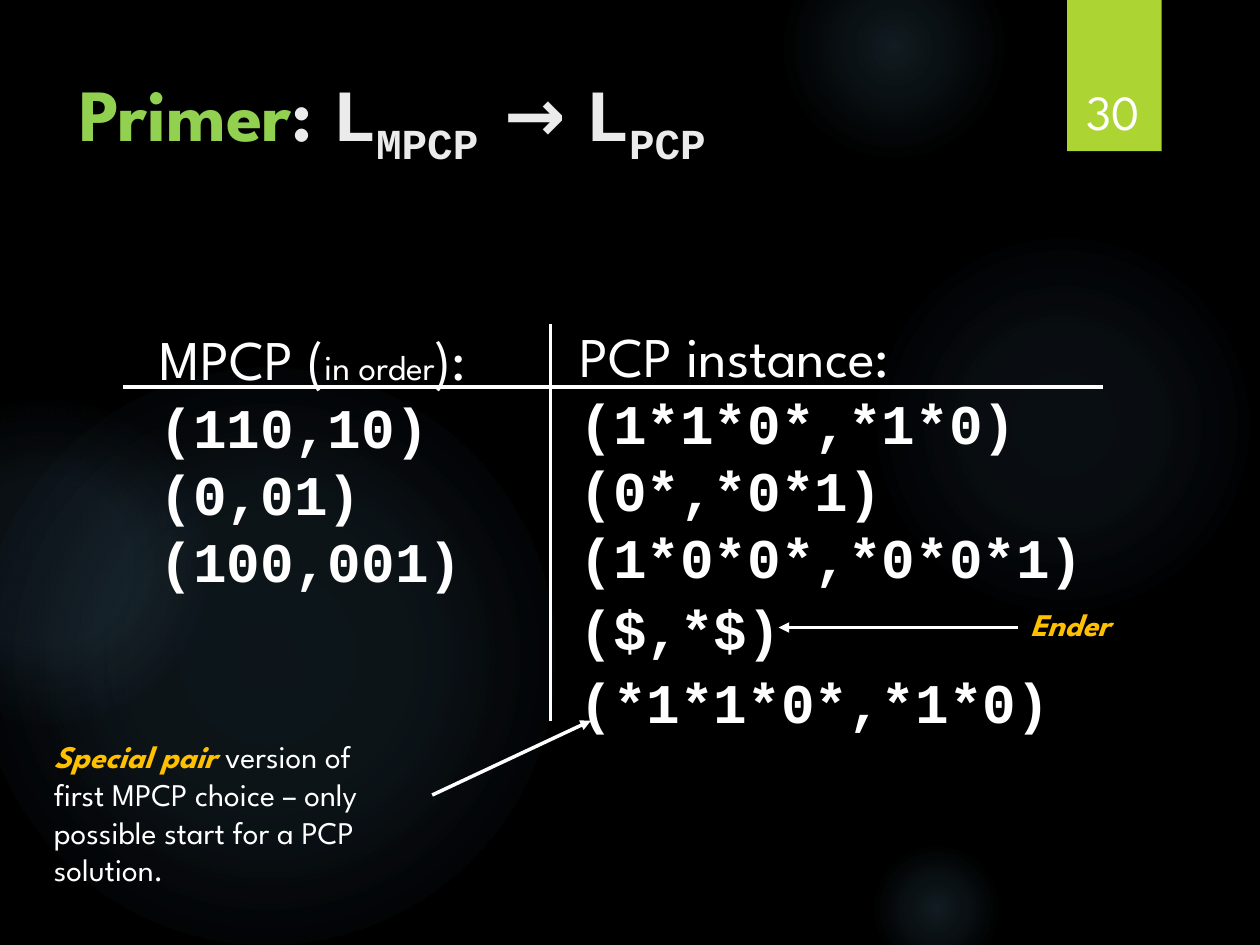
from lxml import etree
from pptx import Presentation
from pptx.dml.color import RGBColor
from pptx.enum.shapes import MSO_CONNECTOR, MSO_SHAPE
from pptx.enum.text import MSO_ANCHOR, MSO_AUTO_SIZE, PP_ALIGN
from pptx.oxml import parse_xml
from pptx.oxml.ns import nsdecls, qn
from pptx.util import Inches, Pt

SANS, MONO = "League Spartan", "Courier New"
WHITE, LIGHT, BLACK = "FFFFFF", "EBEBEB", "000000"
GREEN, LIME, AMBER, GLOW = "92D050", "ACD433", "FFC000", "7AC4F0"
PAIR_LEFT = 4.5

# Background glows: left, top, diameter, (position %, opacity %) stops
GLOWS = [
    (6.89, 1.83, 3.08, [(0, 7), (36, 6), (69, 0)]),
    (6.22, -0.5, 1.75, [(0, 14), (36, 7), (73, 0)]),
    (6.89, 6.67, 1.08, [(0, 14), (36, 7), (66, 0)]),
    (-0.17, 2.92, 4.58, [(0, 11), (36, 10), (75, 0)]),
    (-0.92, 3.17, 2.58, [(0, 8), (36, 8), (72, 0)]),
]


def rgb(color):
    return RGBColor.from_string(color)


def style(font, size=None, name=None, color=None, bold=None, italic=None):
    if size:
        font.size = Pt(size)
    if name:
        font.name = name
    if color:
        font.color.rgb = rgb(color)
    font.bold = bold
    font.italic = italic


def add_shape(slide, kind, left, top, width, height):
    shape = slide.shapes.add_shape(
        kind, Inches(left), Inches(top), Inches(width), Inches(height))
    shape.shadow.inherit = False
    shape.line.fill.background()
    return shape


def add_glow(slide, left, top, diameter, stops):
    shape = add_shape(slide, MSO_SHAPE.OVAL, left, top, diameter, diameter)
    stop_xml = "".join(
        f'<a:gs pos="{position * 1000}"><a:srgbClr val="{GLOW}">'
        f'<a:alpha val="{opacity * 1000}"/></a:srgbClr></a:gs>'
        for position, opacity in stops)
    gradient = parse_xml(
        f'<a:gradFill {nsdecls("a")} rotWithShape="1"><a:gsLst>{stop_xml}</a:gsLst>'
        '<a:path path="circle"><a:fillToRect l="50000" t="50000" r="50000" b="50000"/>'
        '</a:path></a:gradFill>')
    shape._element.spPr.find(qn("a:prstGeom")).addnext(gradient)


def add_text(slide, left, top, width, height, lines, **font):
    """Each line is a string, or a list of (text, run style) pairs."""
    box = slide.shapes.add_textbox(
        Inches(left), Inches(top), Inches(width), Inches(height))
    frame = box.text_frame
    frame.word_wrap = False
    frame.auto_size = MSO_AUTO_SIZE.SHAPE_TO_FIT_TEXT
    for index, line in enumerate(lines):
        paragraph = frame.add_paragraph() if index else frame.paragraphs[0]
        style(paragraph.font, **font)
        for text, run_style in [(line, {})] if isinstance(line, str) else line:
            run = paragraph.add_run()
            run.text = text
            style(run.font, **{**font, **run_style})
    return box


def add_line(slide, start, end, arrow=False):
    line = slide.shapes.add_connector(
        MSO_CONNECTOR.STRAIGHT, *(Inches(value) for value in (*start, *end)))
    line.line.color.rgb = rgb(WHITE)
    line.line.width = Pt(2)
    if arrow:
        etree.SubElement(line.line._get_or_add_ln(), qn("a:tailEnd"), type="triangle")
    etree.SubElement(line._element.spPr, qn("a:effectLst"))


def fill_title(slide):
    title = slide.shapes.title
    title.left, title.top = Inches(0.53), Inches(0.49)
    title.width, title.height = Inches(7.72), Inches(1.53)
    frame = title.text_frame
    frame.vertical_anchor = MSO_ANCHOR.TOP
    frame.auto_size = MSO_AUTO_SIZE.NONE
    paragraph = frame.paragraphs[0]
    paragraph.alignment = PP_ALIGN.LEFT
    for text, name, color, subscript in [
        ("Primer", SANS, GREEN, False), (": ", SANS, LIGHT, False),
        ("L", MONO, LIGHT, False), ("MPCP ", MONO, LIGHT, True),
        ("→ ", SANS, LIGHT, False),
        ("L", MONO, LIGHT, False), ("PCP", MONO, LIGHT, True),
    ]:
        run = paragraph.add_run()
        run.text = text
        style(run.font, 42, name, color, bold=True)
        if subscript:
            run._r.get_or_add_rPr().set("baseline", "-25000")


def add_page_number(slide):
    tab = add_shape(slide, MSO_SHAPE.RECTANGLE, 8.47, 0, 0.75, 1.2)
    tab.fill.solid()
    tab.fill.fore_color.rgb = rgb(LIME)
    number = add_text(slide, 8.49, 0.32, 0.69, 0.84, ["30"],
                      size=28, name=SANS, color=WHITE)
    number.text_frame.auto_size = MSO_AUTO_SIZE.NONE
    number.text_frame.word_wrap = True
    number.text_frame.vertical_anchor = MSO_ANCHOR.BOTTOM
    number.text_frame.paragraphs[0].alignment = PP_ALIGN.CENTER


def add_pairs(slide, left, top, width, height, heading, pairs):
    """A column of string pairs, with an optional heading."""
    lines = [heading] if heading else []
    lines += [[(pair, {"name": MONO, "bold": True})] for pair in pairs]
    add_text(slide, left, top, width, height, lines,
             size=32, name=SANS, color=WHITE)


def main():
    presentation = Presentation()
    presentation.slide_width, presentation.slide_height = Inches(10), Inches(7.5)
    slide = presentation.slides.add_slide(presentation.slide_layouts[5])
    slide.background.fill.solid()
    slide.background.fill.fore_color.rgb = rgb(BLACK)

    # Backdrop, title and page number
    for glow in GLOWS:
        add_glow(slide, *glow)
    fill_title(slide)
    add_page_number(slide)

    # The two instances side by side
    add_pairs(slide, 1.17, 2.53, 3.13, 2.26,
              [("MPCP (", {}), ("in order", {"size": 20}), ("):", {})],
              ["(110,10)", "(0,01)", "(100,001)"])
    add_pairs(slide, PAIR_LEFT, 2.5, 4.25, 2.26, "PCP instance:",
              ["(1*1*0*,*1*0)", "(0*,*0*1)", "(1*0*0*,*0*0*1)"])

    # Ender pair and its label
    add_pairs(slide, PAIR_LEFT, 4.67, 1.82, 0.64, None, ["($,*$)"])
    add_text(slide, 8.08, 4.75, 0.9, 0.4, ["Ender"],
             size=18, name=SANS, color=AMBER, bold=True, italic=True)
    add_line(slide, (8.08, 4.98), (6.18, 4.98), arrow=True)

    # Special pair and its note
    add_pairs(slide, PAIR_LEFT, 5.25, 3.98, 0.64, None, ["(*1*1*0*,*1*0)"])
    special = {"color": AMBER, "bold": True, "italic": True}
    add_text(slide, 0.33, 5.8, 3.1, 1.31,
             [[("Special pair ", special), ("version of", {})],
              "first MPCP choice – only", "possible start for a PCP", "solution."],
             size=18, name=SANS, color=WHITE)
    add_line(slide, (3.43, 6.31), (4.69, 5.72), arrow=True)

    # Table rules
    add_line(slide, (0.98, 3.07), (8.75, 3.07))
    add_line(slide, (4.37, 5.72), (4.37, 2.57))

    presentation.save("out.pptx")


if __name__ == "__main__":
    main()
